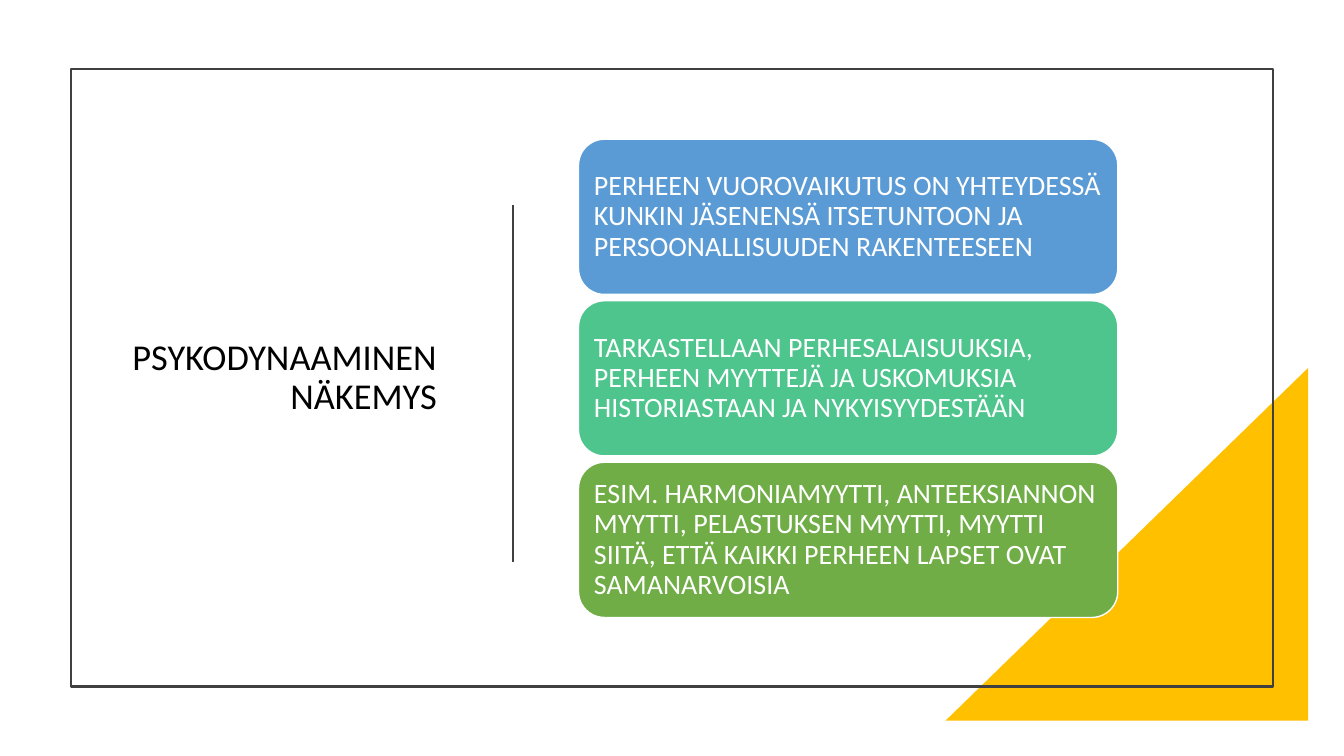
from lxml import etree
from pptx import Presentation
from pptx import util as u
from pptx.dml.color import RGBColor
from pptx.enum import shapes, text
from pptx.oxml.ns import qn

BLACK = RGBColor(0x00, 0x00, 0x00)
WHITE = RGBColor(0xFF, 0xFF, 0xFF)
DARK_GREY = RGBColor(0x40, 0x40, 0x40)
YELLOW = RGBColor(0xFF, 0xC0, 0x00)
BLUE = RGBColor(0x5B, 0x9B, 0xD5)
TEAL = RGBColor(0x4D, 0xC5, 0x8D)
GREEN = RGBColor(0x70, 0xAD, 0x47)
FONT = "Calibri"

# Content
TITLE = "PSYKODYNAAMINEN NÄKEMYS"
POINTS = [
    ("PERHEEN VUOROVAIKUTUS ON YHTEYDESSÄ KUNKIN JÄSENENSÄ ITSETUNTOON JA "
     "PERSOONALLISUUDEN RAKENTEESEEN", BLUE),
    ("TARKASTELLAAN PERHESALAISUUKSIA, PERHEEN MYYTTEJÄ JA USKOMUKSIA "
     "HISTORIASTAAN JA NYKYISYYDESTÄÄN", TEAL),
    ("ESIM. HARMONIAMYYTTI, ANTEEKSIANNON MYYTTI, PELASTUKSEN MYYTTI, MYYTTI "
     "SIITÄ, ETTÄ KAIKKI PERHEEN LAPSET OVAT SAMANARVOISIA", GREEN),
]

# Layout in centimetres
BOX_LEFT, BOX_TOP, BOX_WIDTH, BOX_HEIGHT = 14.58, 3.51, 13.59, 3.91
BOX_STEP = 4.07


def add_shape(slide, preset, left, top, width, height, fill=None):
    shape = slide.shapes.add_shape(
        preset, u.Cm(left), u.Cm(top), u.Cm(width), u.Cm(height))
    shape.shadow.inherit = False
    if fill is None:
        shape.fill.background()
    else:
        shape.fill.solid()
        shape.fill.fore_color.rgb = fill
    return shape


def set_line(shape, color, width):
    shape.line.color.rgb = color
    shape.line.width = u.Pt(width)


def write(shape, words, size, color, align):
    frame = shape.text_frame
    frame.text = words
    frame.word_wrap = True
    frame.auto_size = text.MSO_AUTO_SIZE.NONE
    frame.vertical_anchor = text.MSO_ANCHOR.MIDDLE
    para = frame.paragraphs[0]
    para.alignment = align
    para.line_spacing = 0.9
    font = para.runs[0].font
    font.name, font.size = FONT, u.Pt(size)
    font.color.rgb = color


def main():
    deck = Presentation()
    deck.slide_width, deck.slide_height = u.Cm(33.87), u.Cm(19.05)
    slide = deck.slides.add_slide(deck.slide_layouts[5])

    # Corner triangle and frame
    triangle = add_shape(slide, shapes.MSO_SHAPE.RIGHT_TRIANGLE,
                         23.83, 9.27, 9.14, 8.89, YELLOW)
    triangle.line.fill.background()
    triangle.element.spPr.find(qn("a:xfrm")).set("flipH", "1")
    frame = add_shape(slide, shapes.MSO_SHAPE.RECTANGLE,
                      1.78, 1.73, 30.3, 15.57)
    set_line(frame, DARK_GREY, 1.5)

    # Title
    title = slide.shapes.title
    title.left, title.top = u.Cm(2.79), u.Cm(3.3)
    title.width, title.height = u.Cm(8.48), u.Cm(12.45)
    write(title, TITLE, 26, BLACK, text.PP_ALIGN.RIGHT)

    # Divider
    divider = slide.shapes.add_connector(
        shapes.MSO_CONNECTOR.STRAIGHT,
        u.Cm(12.93), u.Cm(5.16), u.Cm(12.93), u.Cm(14.15))
    set_line(divider, DARK_GREY, 1.5)
    etree.SubElement(divider.element.spPr, qn("a:effectLst"))

    # Stacked points
    for index, (words, fill) in enumerate(POINTS):
        box = add_shape(slide, shapes.MSO_SHAPE.ROUNDED_RECTANGLE,
                        BOX_LEFT, BOX_TOP + index * BOX_STEP,
                        BOX_WIDTH, BOX_HEIGHT, fill)
        set_line(box, WHITE, 1)
        write(box, words, 20, WHITE, text.PP_ALIGN.LEFT)
        margins = box.text_frame
        margins.margin_left = margins.margin_right = u.Cm(0.2)
        margins.margin_top = margins.margin_bottom = u.Cm(0.2)

    deck.save("out.pptx")


if __name__ == "__main__":
    main()
